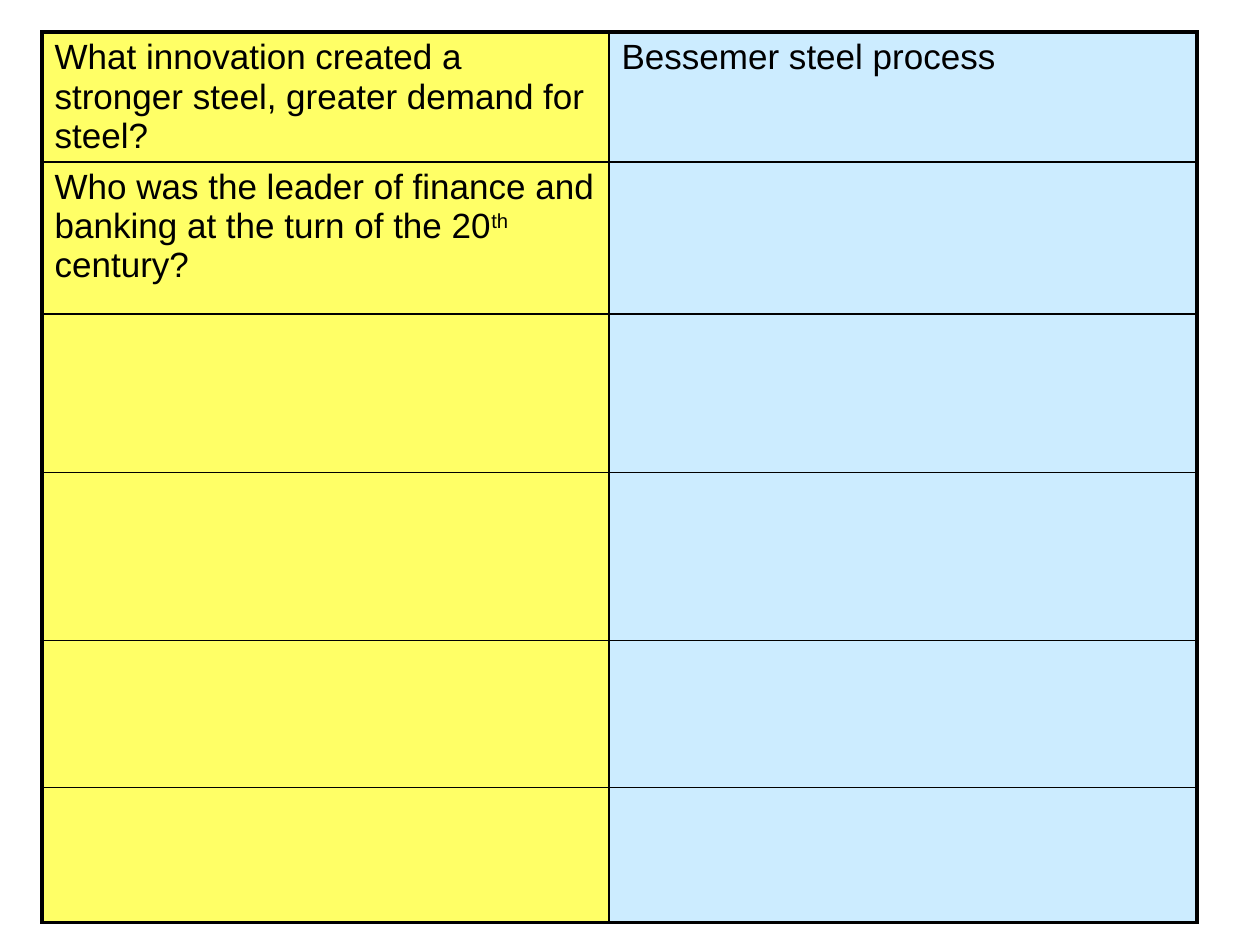
import pptx
import pptx.util
import pptx.dml.color
import pptx.oxml.ns
from lxml import etree

PX = 914400 // 126
COLORS = {"question": "FFFF66", "answer": "CCECFF", "ink": "000000"}
COLUMN_WIDTHS = [567, 588]
ROW_HEIGHTS = [120, 152, 159, 168, 147, 135]
THICK, THIN = 2.25, 1
QUESTIONS_AND_ANSWERS = [
    (
        [("What innovation created a stronger steel, greater demand for steel?", False)],
        [("Bessemer steel process", False)],
    ),
    (
        [
            ("Who was the leader of finance and banking at the turn of the 20", False),
            ("th", True),
            (" century?", False),
        ],
        [],
    ),
]


def add_child(parent, tag, **attributes):
    """Append a DrawingML element to parent and return it."""
    return etree.SubElement(parent, pptx.oxml.ns.qn(tag), attributes)


def set_borders(cell, widths):
    """Draw the cell's edges, given a width in points for each side."""
    properties = cell._tc.get_or_add_tcPr()
    for position, (side, width) in enumerate(widths.items()):
        line = etree.Element(
            pptx.oxml.ns.qn(f"a:ln{side}"), w=str(pptx.util.Pt(width))
        )
        fill = add_child(line, "a:solidFill")
        add_child(fill, "a:srgbClr", val=COLORS["ink"])
        properties.insert(position, line)


def write_runs(cell, runs):
    """Write (text, is_superscript) runs into the cell."""
    paragraph = cell.text_frame.paragraphs[0]
    spacing = add_child(paragraph._p.get_or_add_pPr(), "a:spcBef")
    add_child(spacing, "a:spcPct", val="20000")
    for text, is_superscript in runs:
        run = paragraph.add_run()
        run.text = text
        run.font.name = "Arial"
        run.font.size = pptx.util.Pt(20)
        run.font.bold = False
        run.font.color.rgb = pptx.dml.color.RGBColor.from_string(COLORS["ink"])
        if is_superscript:
            run.font._element.set("baseline", "30000")


def add_review_table(slide, left, top):
    """Place the question and answer table with its corner at left, top."""
    row_count, column_count = len(ROW_HEIGHTS), len(COLUMN_WIDTHS)
    box = [left, top, sum(COLUMN_WIDTHS), sum(ROW_HEIGHTS)]
    review = slide.shapes.add_table(
        row_count, column_count, *(length * PX for length in box)
    ).table
    review.first_row = review.horz_banding = False
    for column, width in zip(review.columns, COLUMN_WIDTHS):
        column.width = width * PX
    for row, height in zip(review.rows, ROW_HEIGHTS):
        row.height = height * PX

    for r in range(row_count):
        for c, role in enumerate(("question", "answer")):
            cell = review.cell(r, c)
            cell.fill.solid()
            cell.fill.fore_color.rgb = pptx.dml.color.RGBColor.from_string(COLORS[role])
            outer_sides = {
                "L": c == 0,
                "R": c == column_count - 1,
                "T": r == 0,
                "B": r == row_count - 1,
            }
            set_borders(
                cell,
                {side: THICK if outer else THIN for side, outer in outer_sides.items()},
            )
            if r < len(QUESTIONS_AND_ANSWERS):
                write_runs(cell, QUESTIONS_AND_ANSWERS[r][c])


def main():
    """Build the review slide and save it."""
    presentation = pptx.Presentation()
    presentation.slide_width = 1260 * PX
    presentation.slide_height = 945 * PX
    slide = presentation.slides.add_slide(presentation.slide_layouts[6])
    add_review_table(slide, 42, 32)
    presentation.save("out.pptx")


if __name__ == "__main__":
    main()
